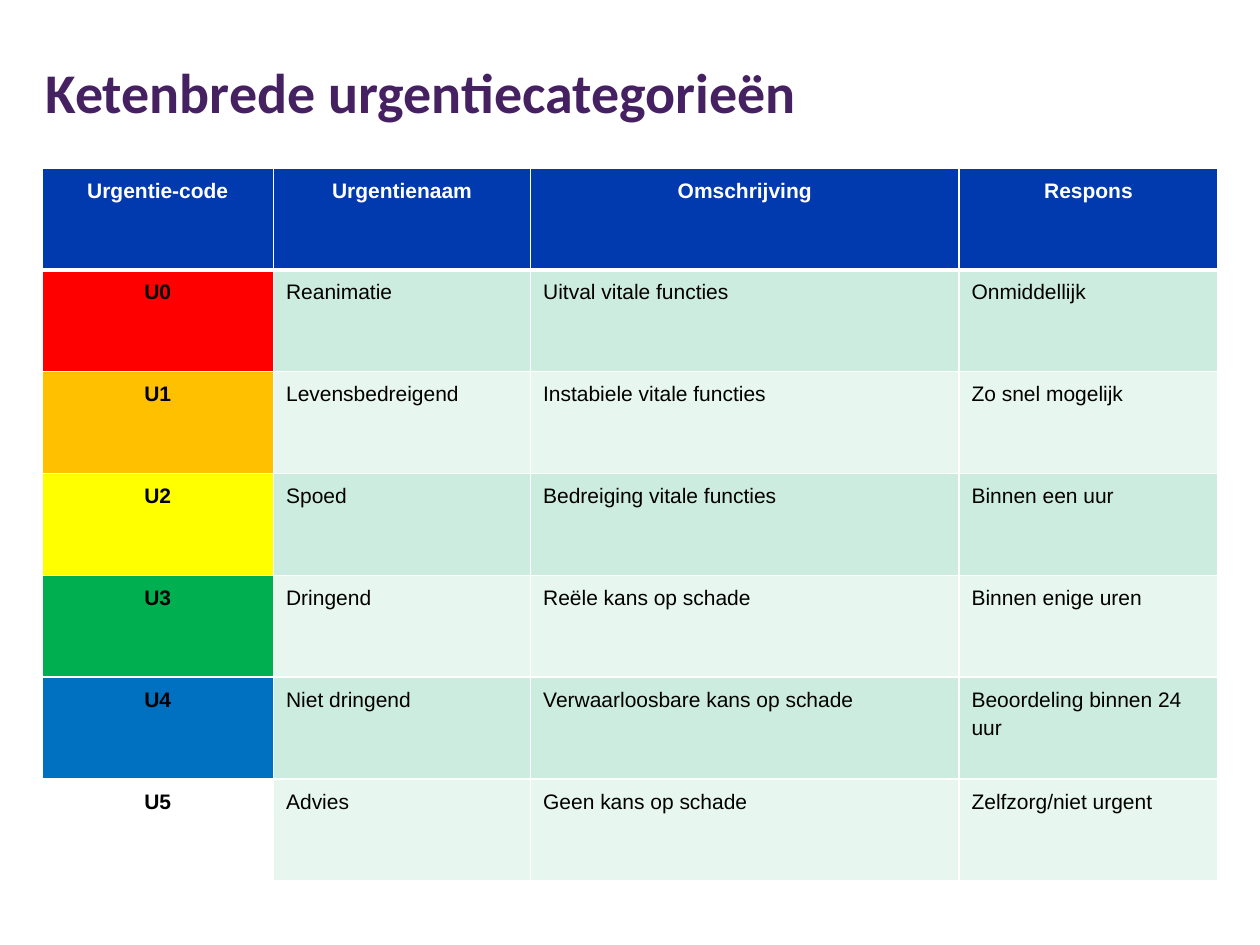
from lxml.etree import SubElement
from pptx import Presentation
from pptx.dml.color import RGBColor
from pptx.enum.text import MSO_ANCHOR as Anchor, PP_ALIGN as Align
from pptx.oxml.ns import qn
from pptx.util import Pt

PURPLE, BLUE, WHITE, BLACK = "452161", "003AAE", "FFFFFF", "000000"
BANDS = ["CBECDE", "E7F6EF"]
COLUMN_WIDTHS = [132.3, 146.9, 244.8, 148]
ROW_HEIGHT = 58.2
HEADINGS = ["Urgentie-code", "Urgentienaam", "Omschrijving", "Respons"]
CATEGORIES = [
    ("FF0000", "U0", "Reanimatie", "Uitval vitale functies", "Onmiddellijk"),
    ("FFC000", "U1", "Levensbedreigend", "Instabiele vitale functies", "Zo snel mogelijk"),
    ("FFFF00", "U2", "Spoed", "Bedreiging vitale functies", "Binnen een uur"),
    ("00B050", "U3", "Dringend", "Reële kans op schade", "Binnen enige uren"),
    ("0070C0", "U4", "Niet dringend", "Verwaarloosbare kans op schade", "Beoordeling binnen 24 uur"),
    ("FFFFFF", "U5", "Advies", "Geen kans op schade", "Zelfzorg/niet urgent"),
]


def rgb(value):
    return RGBColor.from_string(value)


class UrgencySlide:
    text_font, title_font = "Arial", "Calibri"
    text_size, title_size = 12, 32

    def __init__(self, deck):
        self.slide = deck.slides.add_slide(deck.slide_layouts[6])

    def set_text(self, frame, text, font, size, color, bold, spacing, align=Align.LEFT):
        frame.text = text
        paragraph = frame.paragraphs[0]
        paragraph.alignment = align
        paragraph.line_spacing = spacing
        style = paragraph.runs[0].font
        style.name, style.size, style.bold = font, Pt(size), bold
        style.color.rgb = rgb(color)

    def title(self, text, left, top, width, height):
        frame = self.slide.shapes.add_textbox(Pt(left), Pt(top), Pt(width), Pt(height)).text_frame
        frame.word_wrap = True
        frame.vertical_anchor = Anchor.BOTTOM
        frame.margin_left = frame.margin_bottom = 0
        self.set_text(frame, text, self.title_font, self.title_size, PURPLE, True, 0.9)

    def borders(self, cell, top, bottom):
        properties = cell._tc.get_or_add_tcPr()
        widths = {"a:lnL": 1, "a:lnR": 1, "a:lnT": top, "a:lnB": bottom}
        for position, (side, width) in enumerate(widths.items()):
            line = SubElement(properties, qn(side), w=str(Pt(width)))
            fill = SubElement(line, qn("a:solidFill"))
            SubElement(fill, qn("a:srgbClr"), val=WHITE)
            properties.insert(position, line)

    def cell(self, cell, text, fill, color, bold, align, top=1, bottom=1):
        cell.fill.solid()
        cell.fill.fore_color.rgb = rgb(fill)
        self.set_text(cell.text_frame, text, self.text_font, self.text_size, color, bold, 1.2, align)
        self.borders(cell, top, bottom)

    def table(self, left, top):
        row_count = len(CATEGORIES) + 1
        grid = self.slide.shapes.add_table(
            row_count, len(HEADINGS), Pt(left), Pt(top),
            Pt(sum(COLUMN_WIDTHS)), Pt(ROW_HEIGHT * row_count)).table
        for column, width in zip(grid.columns, COLUMN_WIDTHS):
            column.width = Pt(width)
        for row in grid.rows:
            row.height = Pt(ROW_HEIGHT)
        for column, heading in enumerate(HEADINGS):
            self.cell(grid.cell(0, column), heading, BLUE, WHITE, True, Align.CENTER, bottom=3)
        for row, (code_color, *texts) in enumerate(CATEGORIES, 1):
            for column, text in enumerate(texts):
                is_code = column == 0
                fill = code_color if is_code else BANDS[(row - 1) % 2]
                align = Align.CENTER if is_code else Align.LEFT
                self.cell(grid.cell(row, column), text, fill, BLACK, is_code, align,
                          top=3 if row == 1 else 1)


def main():
    deck = Presentation()
    deck.slide_width, deck.slide_height = Pt(720), Pt(540)
    urgency = UrgencySlide(deck)
    urgency.title("Ketenbrede urgentiecategorieën", 26, 24, 568, 48)
    urgency.table(24, 96)
    deck.save("out.pptx")


if __name__ == "__main__":
    main()
